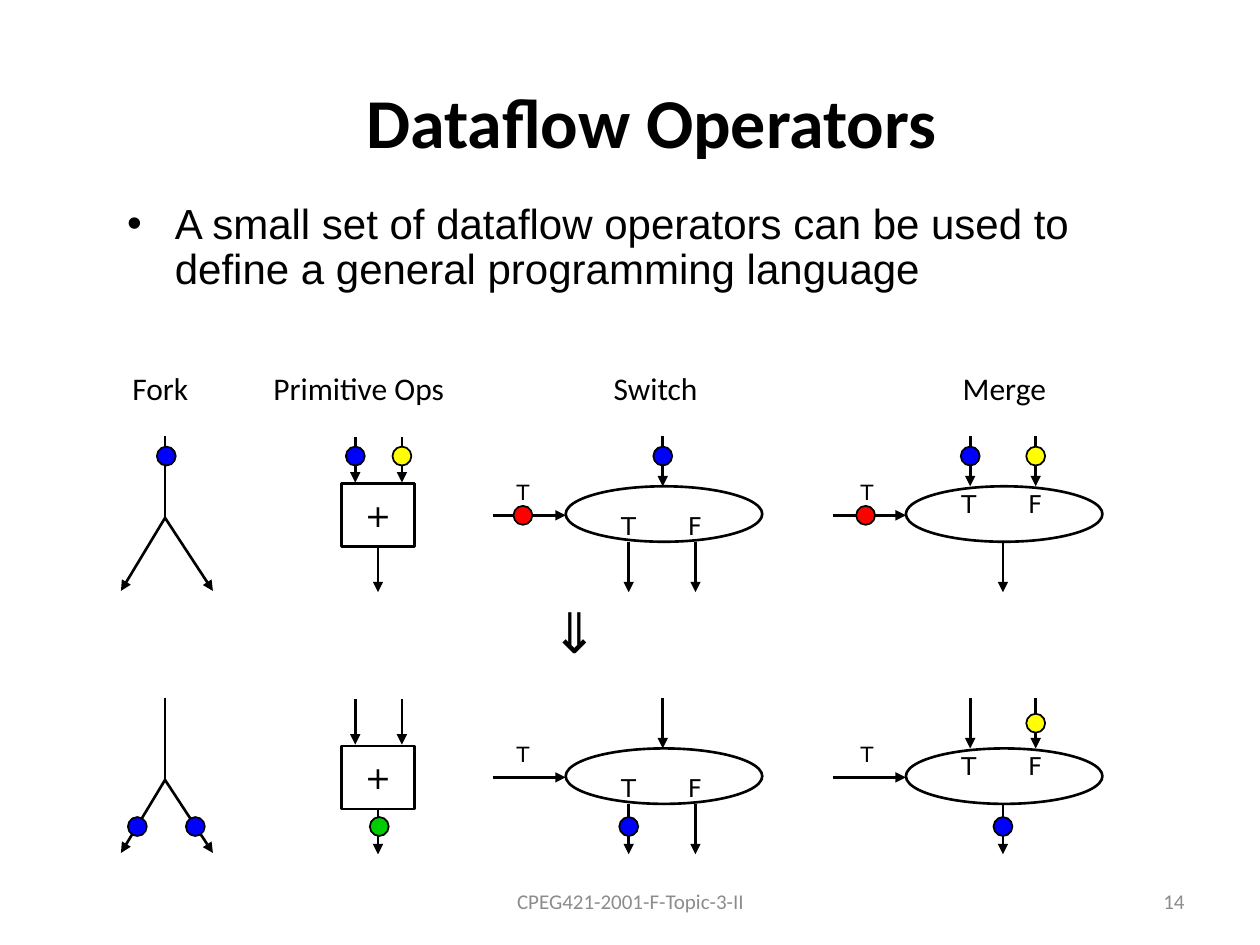
from lxml.etree import SubElement
from pptx import Presentation
from pptx.dml.color import RGBColor
from pptx.enum.shapes import MSO_CONNECTOR, MSO_SHAPE
from pptx.enum.text import MSO_ANCHOR, MSO_AUTO_SIZE, PP_ALIGN
from pptx.oxml.ns import qn
from pptx.util import Inches, Pt

BLACK, GRAY = "000000", "8C8C8C"
BLUE, YELLOW, RED, GREEN = "0000FF", "FFFF00", "FF0000", "00CC00"
HEADING_FONT, BODY_FONT, SYMBOL_FONT = "Calibri", "Arial", "DejaVu Sans"
TOKEN_SIZE = 0.15
ROW_GAP = 2.08  # from the state before firing to the state after


def color(hex_value):
    return RGBColor.from_string(hex_value)


class DataflowSlide:
    """Holds the drawing style, the slide and the shapes being added to."""

    def __init__(self, slide):
        self.slide = slide
        self.shapes = slide.shapes

    def start_group(self):
        self.shapes = self.slide.shapes.add_group_shape().shapes

    def end_group(self):
        self.shapes = self.slide.shapes

    def add_text(self, paragraph, text, size, font, ink=BLACK, bold=False):
        run = paragraph.add_run()
        run.text = text
        run.font.size = Pt(size)
        run.font.name = font
        run.font.bold = bold
        run.font.color.rgb = color(ink)

    def title(self, text, left, top, width, height):
        title = self.slide.shapes.title
        title.left, title.top = Inches(left), Inches(top)
        title.width, title.height = Inches(width), Inches(height)
        title.text_frame.vertical_anchor = MSO_ANCHOR.MIDDLE
        paragraph = title.text_frame.paragraphs[0]
        paragraph.alignment = PP_ALIGN.CENTER
        self.add_text(paragraph, text, 40, HEADING_FONT, bold=True)

    def text_box(self, left, top, width, height):
        return self.shapes.add_textbox(
            Inches(left), Inches(top), Inches(width), Inches(height))

    def bullet(self, text, left, top, width, height):
        frame = self.text_box(left, top, width, height).text_frame
        frame.word_wrap = True
        paragraph = frame.paragraphs[0]
        paragraph.line_spacing = 0.9
        paragraph.space_before = Pt(4.8)
        properties = paragraph._p.get_or_add_pPr()
        properties.set("marL", str(Inches(0.38)))
        properties.set("indent", str(-Inches(0.38)))
        SubElement(properties, qn("a:buFont")).set("typeface", BODY_FONT)
        SubElement(properties, qn("a:buChar")).set("char", "•")
        self.add_text(paragraph, text, 24, BODY_FONT)

    def footer(self, text, left, width, alignment):
        frame = self.text_box(left, 6.95, width, 0.4).text_frame
        frame.word_wrap = True
        frame.vertical_anchor = MSO_ANCHOR.MIDDLE
        frame.paragraphs[0].alignment = alignment
        self.add_text(frame.paragraphs[0], text, 12, HEADING_FONT, GRAY)

    def label(self, text, left, top, width, height, size,
              font=SYMBOL_FONT, spacing=0.85, rotation=0):
        box = self.text_box(left, top, width, height)
        box.rotation = rotation
        frame = box.text_frame
        frame.word_wrap = False
        frame.auto_size = MSO_AUTO_SIZE.SHAPE_TO_FIT_TEXT
        frame.margin_left = frame.margin_right = Inches(0.07)
        frame.margin_top = frame.margin_bottom = Inches(0.03)
        frame.paragraphs[0].line_spacing = spacing
        self.add_text(frame.paragraphs[0], text, size, font)

    def outline(self, preset, left, top, width, height, fill=None, weight=1.5):
        shape = self.shapes.add_shape(
            preset, Inches(left), Inches(top), Inches(width), Inches(height))
        shape.shadow.inherit = False
        if fill:
            shape.fill.solid()
            shape.fill.fore_color.rgb = color(fill)
        else:
            shape.fill.background()
        shape.line.color.rgb = color(BLACK)
        shape.line.width = Pt(weight)
        return shape

    def operator_box(self, symbol, left, top, width, height):
        box = self.outline(MSO_SHAPE.RECTANGLE, left, top, width, height)
        frame = box.text_frame
        frame.word_wrap = False
        frame.vertical_anchor = MSO_ANCHOR.MIDDLE
        frame.paragraphs[0].alignment = PP_ALIGN.CENTER
        self.add_text(frame.paragraphs[0], symbol, 18, SYMBOL_FONT)
        return box

    def token(self, center_x, center_y, fill):
        self.outline(MSO_SHAPE.OVAL, center_x - TOKEN_SIZE / 2,
                     center_y - TOKEN_SIZE / 2, TOKEN_SIZE, TOKEN_SIZE, fill, 1)

    def edge(self, x1, y1, x2, y2, arrow=True):
        connector = self.shapes.add_connector(
            MSO_CONNECTOR.STRAIGHT, Inches(x1), Inches(y1), Inches(x2), Inches(y2))
        connector.line.color.rgb = color(BLACK)
        connector.line.width = Pt(1.5)
        properties = connector._element.spPr
        if arrow:
            SubElement(properties.find(qn("a:ln")), qn("a:tailEnd")).set("type", "triangle")
        SubElement(properties, qn("a:effectLst"))
        return connector

    def fork(self, y):
        self.start_group()
        self.edge(1.31, y, 1.31, y + 0.65, arrow=False)
        self.edge(1.31, y + 0.65, 0.96, y + 1.23)
        self.edge(1.31, y + 0.65, 1.69, y + 1.23)
        self.end_group()

    def primitive(self, y):
        self.start_group()
        box = self.operator_box("+", 2.71, y + 0.38, 0.58, 0.5)
        for x in (2.82, 3.19):
            self.edge(x, y + 0.01, x, y + 0.37)
        self.edge(3, y + 0.88, 3, y + 1.24).begin_connect(box, 2)
        self.end_group()

    def gate(self, left, y, inputs, outputs, true_x, label_y):
        """Draw a switch or merge: an ellipse with a control input on its left."""
        self.start_group()
        self.outline(MSO_SHAPE.OVAL, left, y + 0.4, 1.56, 0.44)
        for x in inputs:
            self.edge(x, y, x, y + 0.4)
        for x in outputs:
            self.edge(x, y + 0.84, x, y + 1.24)
        self.edge(left - 0.58, y + 0.63, left, y + 0.63)
        self.label("T", true_x, y + label_y, 0.26, 0.25, 14)
        self.label("F", true_x + 0.53, y + label_y, 0.25, 0.25, 14)
        self.end_group()


def main():
    presentation = Presentation()
    presentation.slide_width, presentation.slide_height = Inches(10), Inches(7.5)
    page = DataflowSlide(presentation.slides.add_slide(presentation.slide_layouts[5]))

    page.footer("CPEG421-2001-F-Topic-3-II", 3.42, 3.17, PP_ALIGN.CENTER)
    page.footer("14", 7.17, 2.33, PP_ALIGN.RIGHT)
    page.title("Dataflow Operators", 0.67, 0.33, 9, 1.25)
    page.bullet("A small set of dataflow operators can be used to define "
                "a general programming language", 0.91, 1.56, 8.01, 1.16)

    headings = (("Fork", 0.98, 0.64), ("Primitive Ops", 2.1, 1.62),
                ("Switch", 4.8, 0.88), ("Merge", 7.57, 0.85))
    for heading, left, width in headings:
        page.label(heading, left, 2.94, width, 0.32, 18, HEADING_FONT, 0.87)

    before = 3.46
    after = before + ROW_GAP
    for y in (before, after):
        page.fork(y)
        page.primitive(y)
        page.gate(4.49, y, (5.26,), (4.99, 5.52), 4.86, 0.6)
        page.gate(7.19, y, (7.7, 8.22), (7.96,), 7.56, 0.43)
        for control_x in (4.03, 6.76):
            page.label("T", control_x, y + 0.35, 0.24, 0.23, 12)

    page.label("⇒", 4.27, 4.8, 0.58, 0.52, 32, spacing=0.87, rotation=90)

    input_y, control_y, output_y = before + 0.16, before + 0.63, after + 1.02
    tokens = (
        (1.32, input_y, BLUE), (2.82, input_y, BLUE), (3.19, input_y, YELLOW),
        (5.26, input_y, BLUE), (7.7, input_y, BLUE), (8.22, input_y, YELLOW),
        (4.15, control_y, RED), (6.87, control_y, RED),
        (1.09, output_y, BLUE), (1.55, output_y, BLUE), (3.01, output_y, GREEN),
        (4.99, output_y, BLUE), (7.96, output_y, BLUE),
        (8.22, after + 0.2, YELLOW),
    )
    for x, y, fill in tokens:
        page.token(x, y, fill)

    presentation.save("out.pptx")


if __name__ == "__main__":
    main()
